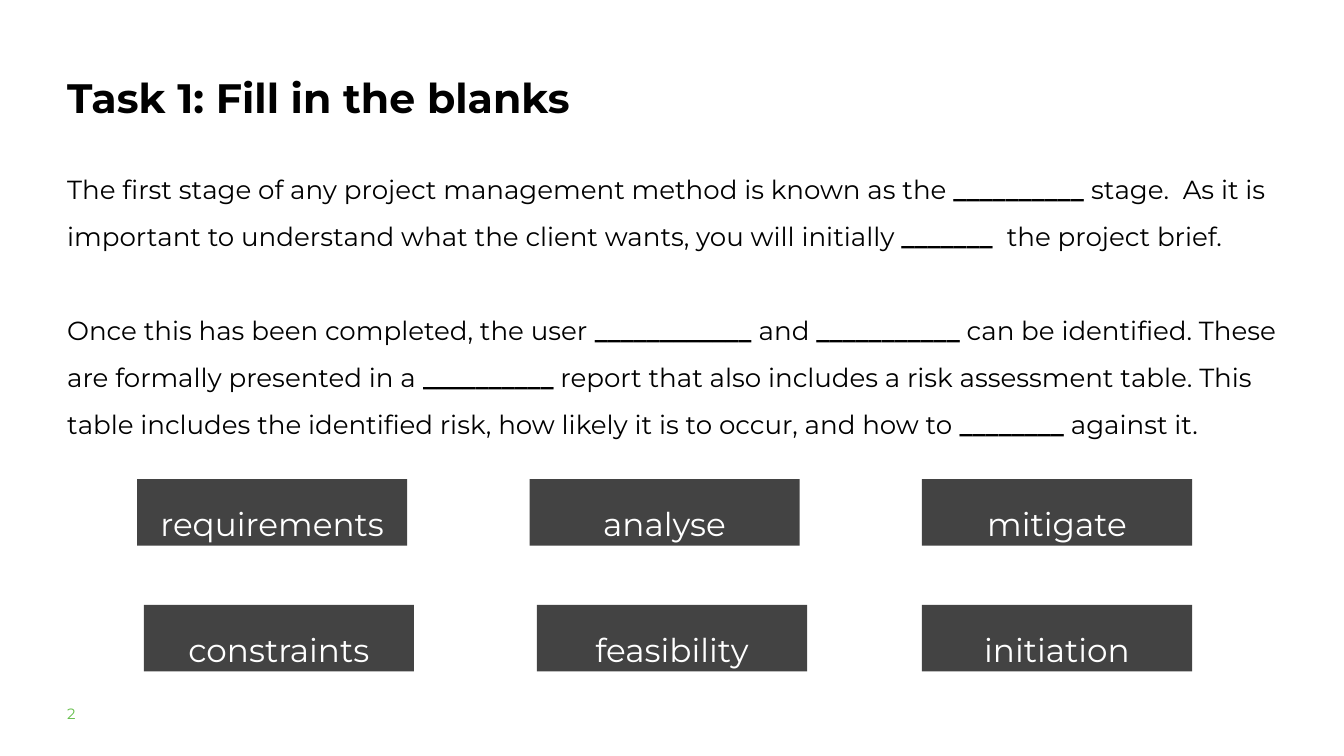
"""Build a fill-in-the-blanks slide with a bank of six words."""
from lxml import etree
from pptx import Presentation
from pptx.dml.color import RGBColor
from pptx.enum.shapes import MSO_SHAPE
from pptx.enum.text import MSO_ANCHOR, MSO_AUTO_SIZE, PP_ALIGN
from pptx.oxml.ns import qn
from pptx.util import Inches, Pt

RECT = MSO_SHAPE.RECTANGLE
TOP = MSO_ANCHOR.TOP
FIXED = MSO_AUTO_SIZE.NONE
LEFT, CENTER = PP_ALIGN.LEFT, PP_ALIGN.CENTER

FONT = "Montserrat"
COLORS = {"text": "000000", "number": "65BE4B", "card": "434343", "word": "FFFFFF"}

TITLE = "Task 1: Fill in the blanks"
# Odd pieces between bars are the bold blanks.
STORY = [
    "The first stage of any project management method is known as the "
    "|__________ |stage.  As it is important to understand what the client "
    "wants, you will initially |_______ | the project brief.",
    "Once this has been completed, the user| ____________ |and |___________"
    "| can be identified. These are formally presented in a| __________"
    "| report that also includes a risk assessment table. This table includes "
    "the identified risk, how likely it is to occur, and how to| ________"
    "| against it.",
]
ROWS = [
    (7.13, [(2.04, "requirements"), (7.88, "analyse"), (13.72, "mitigate")]),
    (9, [(2.14, "constraints"), (7.99, "feasibility"), (13.72, "initiation")]),
]


def place(shape, left, top, width, height):
    shape.left, shape.top = Inches(left), Inches(top)
    shape.width, shape.height = Inches(width), Inches(height)


def set_frame(frame, inset=0):
    frame.word_wrap = True
    frame.auto_size = FIXED
    frame.vertical_anchor = TOP
    frame.margin_left = frame.margin_right = Inches(inset)
    frame.margin_top = frame.margin_bottom = Inches(inset)


def style(para, size, color, bold=False, align=LEFT, lines=1.0):
    para.alignment = align
    para.line_spacing = lines
    para.space_before = para.space_after = Pt(0)
    for run in para.runs:
        run.font.name = FONT
        run.font.size = Pt(size)
        run.font.bold = bold
        run.font.color.rgb = RGBColor.from_string(COLORS[color])


def add_title(slide):
    title = slide.shapes.title
    place(title, 1, 0.97, 14.44, 1.78)
    frame = title.text_frame
    frame.text = TITLE
    set_frame(frame)
    style(frame.paragraphs[0], 44, "text", bold=True, lines=1.15)


def fill_para(para, text):
    props = para._p.get_or_add_pPr()
    props.set("marL", "0")
    props.set("indent", "0")
    etree.SubElement(props, qn("a:buNone"))
    pieces = text.split("|")
    for piece in pieces:
        para.add_run().text = piece
    style(para, 28, "text", lines=1.5)
    for blank in para.runs[1::2]:
        blank.font.bold = True


def add_story(slide):
    body = slide.placeholders[1]
    place(body, 1, 2.34, 18, 3.65)
    frame = body.text_frame
    set_frame(frame)
    fill_para(frame.paragraphs[0], STORY[0])
    for text in STORY[1:]:
        para = frame.add_paragraph()
        fill_para(para, text)
        para.space_before = Pt(51)


def add_card(slide, left, top, word):
    card = slide.shapes.add_shape(
        RECT, Inches(left), Inches(top), Inches(4.02), Inches(0.99))
    card.shadow.inherit = False
    card.fill.solid()
    card.fill.fore_color.rgb = RGBColor.from_string(COLORS["card"])
    card.line.fill.background()
    frame = card.text_frame
    frame.text = word
    set_frame(frame, 0.2)
    style(frame.paragraphs[0], 35, "word", align=CENTER, lines=1.3)


def add_number(slide):
    box = slide.shapes.add_textbox(
        Inches(1), Inches(10.48), Inches(1.57), Inches(0.39))
    frame = box.text_frame
    frame.text = "2"
    set_frame(frame)
    style(frame.paragraphs[0], 16, "number")


def main():
    deck = Presentation()
    deck.slide_width, deck.slide_height = Inches(20), Inches(11.25)
    slide = deck.slides.add_slide(deck.slide_layouts[1])
    add_title(slide)
    add_story(slide)
    add_number(slide)
    for top, cards in ROWS:
        for left, word in cards:
            add_card(slide, left, top, word)
    deck.save("out.pptx")


if __name__ == "__main__":
    main()
